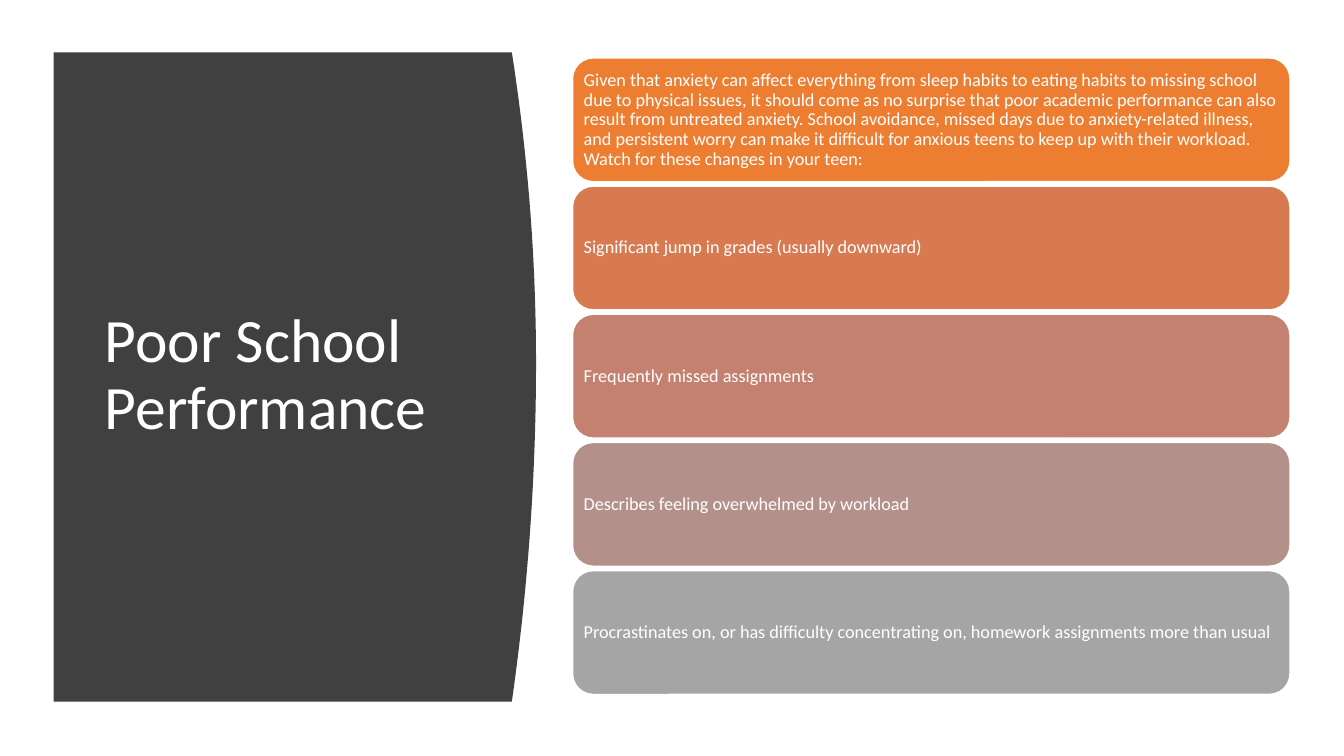
from pptx import Presentation
from pptx.dml.color import RGBColor
from pptx.enum.shapes import MSO_SHAPE as Preset
from pptx.enum.text import MSO_ANCHOR as Anchor, MSO_AUTO_SIZE as AutoSize, PP_ALIGN as Align
from pptx.util import Cm, Pt

WHITE = RGBColor(0xFF, 0xFF, 0xFF)
CHARCOAL = RGBColor(0x40, 0x40, 0x40)
ORANGE = RGBColor(0xED, 0x7D, 0x31)
COPPER = RGBColor(0xD8, 0x7A, 0x51)
ROSE = RGBColor(0xC4, 0x81, 0x70)
MAUVE = RGBColor(0xB4, 0x90, 0x8B)
GREY = RGBColor(0xA5, 0xA5, 0xA5)

SIGNS = [
    ("Given that anxiety can affect everything from sleep habits to eating habits to missing "
     "school due to physical issues, it should come as no surprise that poor academic "
     "performance can also result from untreated anxiety. School avoidance, missed days due to "
     "anxiety-related illness, and persistent worry can make it difficult for anxious teens to "
     "keep up with their workload. Watch for these changes in your teen:", ORANGE),
    ("Significant jump in grades (usually downward)", COPPER),
    ("Frequently missed assignments", ROSE),
    ("Describes feeling overwhelmed by workload", MAUVE),
    ("Procrastinates on, or has difficulty concentrating on, homework assignments more than usual",
     GREY),
]


class SlideBuilder:
    font = "Calibri"
    text_color = WHITE

    def __init__(self, deck):
        self.slide = deck.slides.add_slide(deck.slide_layouts[5])

    def set_text(self, frame, wording, size, space_after=0):
        frame.word_wrap = True
        frame.auto_size = AutoSize.NONE
        frame.vertical_anchor = Anchor.MIDDLE
        paragraph = frame.paragraphs[0]
        paragraph.alignment = Align.LEFT
        paragraph.line_spacing = 0.9
        paragraph.space_after = Pt(space_after)
        run = paragraph.add_run()
        run.text = wording
        run.font.name = self.font
        run.font.size = Pt(size)
        run.font.color.rgb = self.text_color

    def curved_panel(self, left, top, bottom, shoulder, bulge, bulge_y, color, steps=40):
        edge = []
        for step in range(steps + 1):
            y = top + (bottom - top) * step / steps
            reach = bulge_y - top if y < bulge_y else bottom - bulge_y
            x = bulge - (bulge - shoulder) * ((y - bulge_y) / reach) ** 2
            edge.append((Cm(x), Cm(y)))
        outline = self.slide.shapes.build_freeform(Cm(left), Cm(top))
        outline.add_line_segments(edge + [(Cm(left), Cm(bottom))], close=True)
        panel = outline.convert_to_shape()
        panel.shadow.inherit = False
        panel.fill.solid()
        panel.fill.fore_color.rgb = color
        panel.line.fill.background()

    def title(self, wording, left, top, width, height):
        heading = self.slide.shapes.title
        heading.left, heading.top = Cm(left), Cm(top)
        heading.width, heading.height = Cm(width), Cm(height)
        self.set_text(heading.text_frame, wording, 44)
        self.slide.shapes._spTree.append(heading._element)

    def card(self, wording, color, left, top, width, height):
        card = self.slide.shapes.add_shape(
            Preset.ROUNDED_RECTANGLE, Cm(left), Cm(top), Cm(width), Cm(height))
        card.shadow.inherit = False
        card.fill.solid()
        card.fill.fore_color.rgb = color
        card.line.color.rgb = WHITE
        card.line.width = Pt(1)
        frame = card.text_frame
        frame.margin_left = frame.margin_right = Cm(0.13)
        frame.margin_top = frame.margin_bottom = Cm(0.13)
        self.set_text(frame, wording, 13, space_after=4.55)


def main():
    deck = Presentation()
    deck.slide_width, deck.slide_height = Cm(33.87), Cm(19.05)
    builder = SlideBuilder(deck)
    builder.curved_panel(left=1.35, top=1.32, bottom=17.68, shoulder=12.9,
                         bulge=13.51, bulge_y=9.14, color=CHARCOAL)
    builder.title("Poor School Performance", 2.39, 2.82, 9.5, 13.31)
    first_top, pitch = 1.46, 3.23
    for row, (sign, color) in enumerate(SIGNS):
        builder.card(sign, color, 14.43, first_top + row * pitch, 18.08, 3.12)
    deck.save("out.pptx")


if __name__ == "__main__":
    main()
